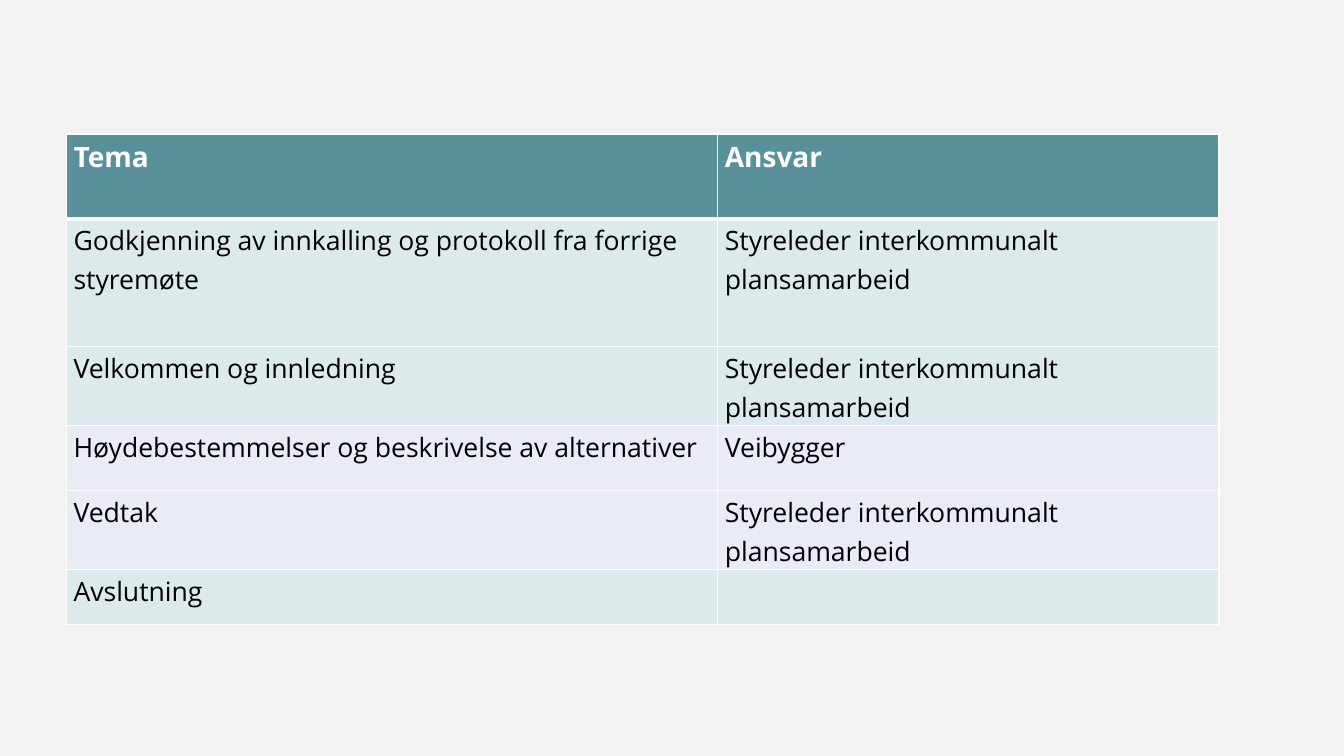
from dataclasses import dataclass
from pptx import Presentation
from pptx import util as u
from pptx.dml.color import RGBColor
from pptx.oxml import ns
from lxml import etree


@dataclass(frozen=True)
class Theme:
    """Hold the colours, font and type sizes."""
    back: str = "F2F2F2"
    head: str = "589199"
    mint: str = "DCEAEB"
    lilac: str = "E9EBF5"
    white: str = "FFFFFF"
    black: str = "000000"
    font: str = "Open Sans"
    title: int = 20
    body: int = 19


T = Theme()
LEAD = "Styreleder interkommunalt plansamarbeid"
COLS = (6.46, 4.97)
ROWS = (
    (0.84, T.head, ("Tema", "Ansvar")),
    (1.27, T.mint, ("Godkjenning av innkalling og protokoll fra forrige styremøte", LEAD)),
    (0.78, T.mint, ("Velkommen og innledning", LEAD)),
    (0.65, T.lilac, ("Høydebestemmelser og beskrivelse av alternativer", "Veibygger")),
    (0.78, T.lilac, ("Vedtak", LEAD)),
    (0.55, T.mint, ("Avslutning", "")),
)


def write(frame, words, size=T.body, color=T.black, bold=False):
    """Write one formatted paragraph into a text frame."""
    para = frame.paragraphs[0]
    para.line_spacing = 1.07
    para.space_after = u.Pt(8)
    run = para.add_run()
    run.text = words
    run.font.name = T.font
    run.font.size = u.Pt(size)
    run.font.bold = bold
    run.font.color.rgb = RGBColor.from_string(color)


def border(cell, **widths):
    """Draw white cell borders with the given side widths in points."""
    props = cell._tc.get_or_add_tcPr()
    for side in "LRTB":
        line = etree.SubElement(props, ns.qn(f"a:ln{side}"), w=str(u.Pt(widths.get(side, 1))))
        fill = etree.SubElement(line, ns.qn("a:solidFill"))
        etree.SubElement(fill, ns.qn("a:srgbClr"), val=T.white)


def agenda(slide, left, top):
    """Place the agenda table with its top left corner at the given point."""
    high = sum(row[0] for row in ROWS)
    box = map(u.Inches, (left, top, sum(COLS), high))
    table = slide.shapes.add_table(len(ROWS), len(COLS), *box).table
    table.horz_banding = False
    for col, width in zip(table.columns, COLS):
        col.width = u.Inches(width)
    for i, (height, shade, words) in enumerate(ROWS):
        table.rows[i].height = u.Inches(height)
        style = dict(size=T.title, color=T.white, bold=True) if i == 0 else {}
        edge = {0: {"B": 3}, 1: {"T": 3}}.get(i, {})
        for j, word in enumerate(words):
            cell = table.cell(i, j)
            cell.margin_left = cell.margin_right = u.Inches(0.07)
            cell.margin_top, cell.margin_bottom = u.Inches(0.01), 0
            border(cell, **edge)
            cell.fill.solid()
            cell.fill.fore_color.rgb = RGBColor.from_string(shade)
            if word:
                write(cell.text_frame, word, **style)


def main():
    """Build and save the slide."""
    deck = Presentation()
    deck.slide_width, deck.slide_height = u.Inches(13.33), u.Inches(7.5)
    slide = deck.slides.add_slide(deck.slide_layouts[6])
    slide.background.fill.solid()
    slide.background.fill.fore_color.rgb = RGBColor.from_string(T.back)
    agenda(slide, 0.66, 1.33)
    deck.save("out.pptx")


if __name__ == "__main__":
    main()
